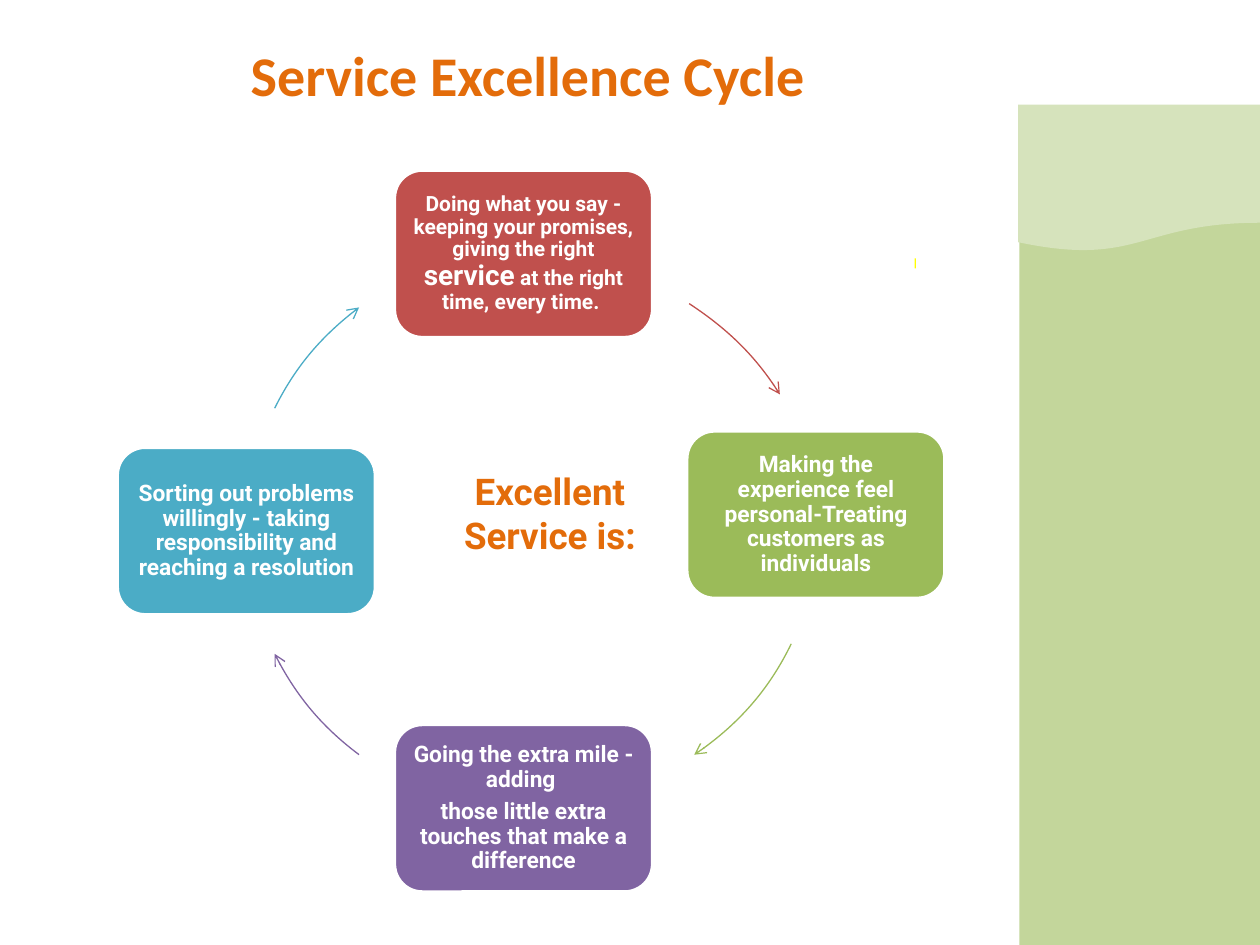
from dataclasses import dataclass

from lxml.etree import SubElement
from pptx import Presentation
from pptx.dml.color import RGBColor
from pptx.enum.shapes import MSO_SHAPE as Preset
from pptx.enum.text import MSO_ANCHOR as Anchor, MSO_AUTO_SIZE as AutoSize, PP_ALIGN as Align
from pptx.oxml.ns import qn
from pptx.util import Inches, Pt


@dataclass(frozen=True)
class Theme:
    white: str = "FFFFFF"
    orange: str = "E36C0A"
    red: str = "C0504D"
    green: str = "9BBB59"
    purple: str = "8064A2"
    blue: str = "4BACC6"
    panel: str = "C3D69B"
    wave: str = "D6E3BC"
    yellow: str = "FFFF00"
    title_font: str = "Calibri"
    body_font: str = "Roboto"
    title_size: int = 32
    center_size: int = 21
    emphasis_size: int = 16
    card_size: int = 13
    small_size: int = 12


THEME = Theme()
CARD_WIDTH, CARD_HEIGHT = 2.05, 1.33
CYCLE_SIZE = 4.41

# Left, top, colour, text size, and paragraphs of (text, own size) runs
CARDS = [
    (3.13, 1.35, THEME.red, THEME.small_size,
     [[("Doing what you say - keeping your promises, giving the right ", None),
       ("service", THEME.emphasis_size),
       (" at the right time, every time. ", None)]]),
    (5.45, 3.42, THEME.green, THEME.card_size,
     ["Making the experience feel personal-Treating customers as individuals"]),
    (3.13, 5.75, THEME.purple, THEME.card_size,
     ["Going the extra mile - adding ",
      "those little extra touches that make a difference"]),
    (0.93, 3.55, THEME.blue, THEME.card_size,
     ["Sorting out problems willingly - taking responsibility and reaching a resolution"]),
]

# Colour, corner of the cycle's square, then start, two control points and end of the curve
ARROWS = [
    (THEME.red, (2.11, 2.09), [(5.47, 2.41), (5.76, 2.6), (6.01, 2.84), (6.19, 3.13)]),
    (THEME.green, (2.1, 1.94), [(6.28, 5.11), (6.11, 5.46), (5.84, 5.77), (5.51, 5.99)]),
    (THEME.purple, (1.95, 2.01), [(2.85, 5.99), (2.57, 5.78), (2.34, 5.51), (2.18, 5.19)]),
    (THEME.blue, (1.95, 2.01), [(2.18, 3.24), (2.34, 2.92), (2.57, 2.65), (2.85, 2.44)]),
]


def rgb(color):
    return RGBColor.from_string(color)


def write_text(shape, paragraphs, *, size, color, font=THEME.body_font, anchor=Anchor.MIDDLE,
               margins=(0.05, 0.05), line_spacing=None, space_after=0):
    """Fill a shape with centred bold paragraphs, each a string or a list of (text, size) runs."""
    frame = shape.text_frame
    frame.word_wrap = True
    frame.auto_size = AutoSize.NONE
    frame.vertical_anchor = anchor
    frame.margin_left = frame.margin_right = Inches(margins[0])
    frame.margin_top = frame.margin_bottom = Inches(margins[1])
    for index, runs in enumerate(paragraphs):
        paragraph = frame.add_paragraph() if index else frame.paragraphs[0]
        paragraph.alignment = Align.CENTER
        paragraph.line_spacing = line_spacing
        paragraph.space_before = Pt(0)
        paragraph.space_after = Pt(space_after)
        for text, own_size in [(runs, None)] if isinstance(runs, str) else runs:
            run = paragraph.add_run()
            run.text = text
            run.font.name = font
            run.font.size = Pt(own_size or size)
            run.font.bold = True
            run.font.color.rgb = rgb(color)


def add_block(slide, preset, left, top, width, height, fill=None, outline=None):
    shape = slide.shapes.add_shape(
        preset, Inches(left), Inches(top), Inches(width), Inches(height))
    shape.shadow.inherit = False
    if fill:
        shape.fill.solid()
        shape.fill.fore_color.rgb = rgb(fill)
    else:
        shape.fill.background()
    if outline:
        shape.line.color.rgb = rgb(outline)
        shape.line.width = Pt(2)
    else:
        shape.line.fill.background()
    return shape


def add_title(slide, text):
    title = slide.shapes.title
    title.left, title.top = Inches(1.25), Inches(0.25)
    title.width, title.height = Inches(5.88), Inches(0.75)
    write_text(title, [text], size=THEME.title_size, color=THEME.orange,
               font=THEME.title_font, margins=(0.08, 0.04), line_spacing=0.9)


def add_card(slide, left, top, color, size, paragraphs):
    card = add_block(slide, Preset.ROUNDED_RECTANGLE, left, top, CARD_WIDTH, CARD_HEIGHT,
                     fill=color, outline=THEME.white)
    write_text(card, paragraphs, size=size, color=THEME.white,
               line_spacing=0.9, space_after=0.35 * size)


def add_curved_arrow(slide, color, corner, points):
    """Draw the points as one Bézier curve with an arrowhead, framed by the cycle's square."""
    start, *others = [(Inches(x), Inches(y)) for x, y in points]
    builder = slide.shapes.build_freeform(*start)
    builder.add_line_segments(others, close=False)
    arrow = builder.convert_to_shape()
    arrow.shadow.inherit = False
    arrow.fill.background()
    arrow.line.color.rgb = rgb(color)
    arrow.line.width = Pt(0.75)
    arrow.left, arrow.top = (Inches(value) for value in corner)
    arrow.width = arrow.height = Inches(CYCLE_SIZE)

    properties = arrow.element.spPr
    SubElement(properties.find(qn("a:ln")), qn("a:tailEnd"), type="arrow")
    curve_path = next(properties.iter(qn("a:path")))
    for side in ("w", "h"):
        curve_path.set(side, str(Inches(CYCLE_SIZE)))
    for point, (x, y) in zip(curve_path.iter(qn("a:pt")), points):
        point.set("x", str(Inches(x - corner[0])))
        point.set("y", str(Inches(y - corner[1])))
    segments = curve_path.findall(qn("a:lnTo"))
    curve = SubElement(curve_path, qn("a:cubicBezTo"))
    for segment in segments:
        curve.append(segment[0])
        curve_path.remove(segment)


def main():
    presentation = Presentation()
    presentation.slide_width, presentation.slide_height = Inches(10), Inches(7.5)
    slide = presentation.slides.add_slide(presentation.slide_layouts[5])

    add_block(slide, Preset.RECTANGLE, 8.09, 1.11, 1.91, 6.39, fill=THEME.panel)
    add_block(slide, Preset.FLOWCHART_DOCUMENT, 8.08, 0.83, 1.92, 1.17, fill=THEME.wave)
    add_title(slide, "Service Excellence Cycle")
    add_block(slide, Preset.RECTANGLE, 7.26, 2.05, 0.01, 0.08, fill=THEME.yellow)

    center = add_block(slide, Preset.ROUNDED_RECTANGLE, 3.56, 3.68, 1.61, 0.88)
    write_text(center, ["Excellent Service is:"], size=THEME.center_size,
               color=THEME.orange, anchor=Anchor.TOP, margins=(0, 0))

    for card in CARDS:
        add_card(slide, *card)
    for arrow in ARROWS:
        add_curved_arrow(slide, *arrow)

    presentation.save("out.pptx")


if __name__ == "__main__":
    main()
